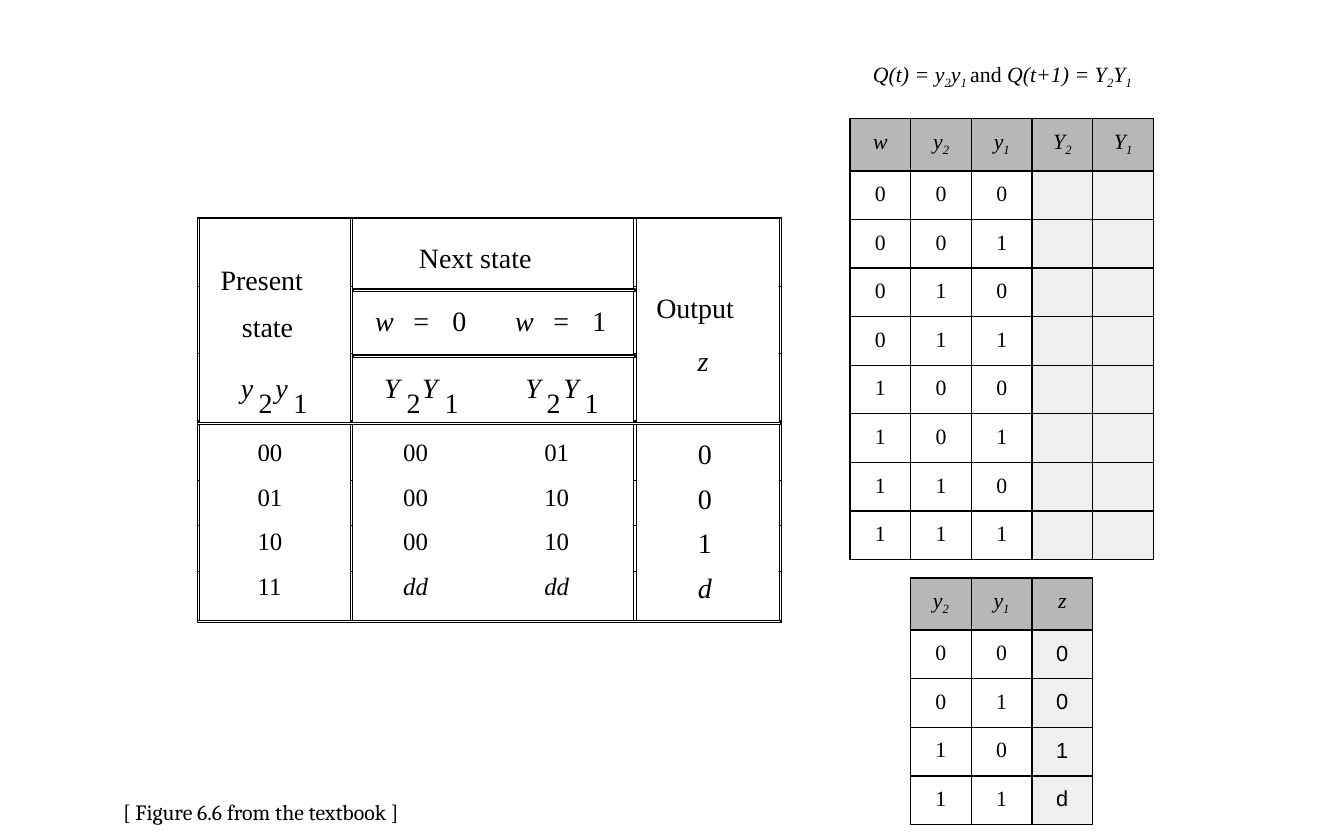
from dataclasses import dataclass
from itertools import pairwise, product

from lxml.etree import SubElement
from pptx import Presentation
from pptx.dml.color import RGBColor
from pptx.enum.shapes import MSO_SHAPE
from pptx.enum.text import MSO_ANCHOR, MSO_AUTO_SIZE, PP_ALIGN
from pptx.oxml.ns import qn
from pptx.util import Inches, Pt

COLUMNS, ROWS = 120, 75
SLIDE_WIDTH, SLIDE_HEIGHT = Inches(12), Inches(7.5)


@dataclass(frozen=True)
class Theme:
    ink: str = "000000"
    paper: str = "FFFFFF"
    header: str = "B7B7B7"
    answer: str = "EFEFEF"
    serif: str = "Times New Roman"
    sans: str = "Arial"
    caption: str = "Cambria"
    large: int = 18
    medium: int = 16
    small: int = 14
    rule: float = 0.75
    border: float = 1


def apply(target, values):
    for name, value in values.items():
        setattr(target, name, value)


def margins(x, y):
    return {"margin_left": x, "margin_right": x, "margin_top": y, "margin_bottom": y}


def symbol(letter, index=""):
    """Runs of an italic variable with an optional subscript."""
    return [(letter, "i")] + ([(index, "is")] if index else [])


class SlideBuilder:
    def __init__(self, slide, theme):
        self.slide, self.theme = slide, theme
        self.shapes = slide.shapes

    def start_group(self):
        self.shapes = self.slide.shapes.add_group_shape().shapes

    def end_group(self):
        self.shapes = self.slide.shapes

    def place(self, column, row, width, height):
        """Turn grid columns and rows into slide lengths."""
        return (int(SLIDE_WIDTH * column / COLUMNS), int(SLIDE_HEIGHT * row / ROWS),
                int(SLIDE_WIDTH * width / COLUMNS), int(SLIDE_HEIGHT * height / ROWS))

    def add_runs(self, frame, runs, size, face, align=PP_ALIGN.LEFT):
        """Add (text, flags) runs; flag i is italic and s is subscript."""
        paragraph = frame.paragraphs[0]
        paragraph.alignment = align
        for text, flags in runs:
            run = paragraph.add_run()
            run.text = text
            apply(run.font, {"size": Pt(size), "name": face, "italic": "i" in flags})
            run.font.color.rgb = RGBColor.from_string(self.theme.ink)
            if "s" in flags:
                run._r.get_or_add_rPr().set("baseline", "-25000")

    def title(self, box, runs):
        title = self.slide.shapes.title
        apply(title, dict(zip(("left", "top", "width", "height"), self.place(*box))))
        apply(title.text_frame, {**margins(Inches(0.1), Inches(0.1)), "word_wrap": True,
                                 "auto_size": MSO_AUTO_SIZE.NONE,
                                 "vertical_anchor": MSO_ANCHOR.TOP})
        self.add_runs(title.text_frame, runs, self.theme.small, self.theme.serif, PP_ALIGN.CENTER)

    def label(self, text, column, row, width, size=None, flags=""):
        frame = self.shapes.add_textbox(*self.place(column, row, width, 3)).text_frame
        apply(frame, {**margins(0, 0), "word_wrap": True})
        self.add_runs(frame, [(text, flags)], size or self.theme.large, self.theme.serif)

    def caption(self, text, box):
        frame = self.shapes.add_textbox(*self.place(*box)).text_frame
        apply(frame, {"word_wrap": False, "auto_size": MSO_AUTO_SIZE.SHAPE_TO_FIT_TEXT})
        self.add_runs(frame, [(text, "")], self.theme.small, self.theme.caption)

    def rule(self, *box):
        """A double rule: a thin outlined bar."""
        bar = self.shapes.add_shape(MSO_SHAPE.RECTANGLE, *self.place(*box))
        bar.shadow.inherit = False
        bar.fill.solid()
        bar.fill.fore_color.rgb = RGBColor.from_string(self.theme.paper)
        bar.line.color.rgb = RGBColor.from_string(self.theme.ink)
        bar.line.width = Pt(self.theme.rule)

    def border(self, cell):
        properties = cell._tc.get_or_add_tcPr()
        for side in ("lnL", "lnR", "lnT", "lnB"):
            line = SubElement(properties, qn(f"a:{side}"), w=str(Pt(self.theme.border)))
            SubElement(SubElement(line, qn("a:solidFill")), qn("a:srgbClr"), val=self.theme.ink)

    def truth_table(self, column, row, headers, lines, inputs):
        """Columns after the first `inputs` hold answers and are shaded."""
        step_x, step_y = 5.42, 4.34
        width, height = len(headers), len(lines) + 1
        box = self.place(column, row, step_x * width, step_y * height)
        table = self.shapes.add_table(height, width, *box).table
        apply(table, {"first_row": False, "horz_banding": False})
        for part in table.columns:
            part.width = box[2] // width
        for part in table.rows:
            part.height = box[3] // height
        cells = [headers] + [[[(value, "")] if value else [] for value in line] for line in lines]
        for y, x in product(range(height), range(width)):
            cell, runs, is_answer = table.cell(y, x), cells[y][x], y > 0 and x >= inputs
            self.border(cell)
            if y == 0 or is_answer:
                cell.fill.solid()
                shade = self.theme.answer if is_answer else self.theme.header
                cell.fill.fore_color.rgb = RGBColor.from_string(shade)
            else:
                cell.fill.background()
            inset = Inches(0.1) if runs else 0
            apply(cell, margins(inset, inset))
            face = self.theme.sans if is_answer else self.theme.serif
            self.add_runs(cell.text_frame, runs, self.theme.small, face, PP_ALIGN.CENTER)


def draw_state_table(builder):
    builder.start_group()
    edges = (17.6, 31.3, 56.6, 69.6)
    levels = (19.4, 25.6, 31.6, 37.6, 42.9, 46.9, 51, 55.6)
    for (top, bottom), edge in product(pairwise(levels), edges):
        builder.rule(edge, top, 0.2, bottom - top)
    for row, thickness in ((19.4, 0.1), (37.7, 0.2), (55.4, 0.2)):
        builder.rule(17.6, row, 52.1, thickness)
    for row in (25.8, 31.7):
        builder.rule(31.6, row, 25.1, 0.2)

    for heading in (("Present", 19.7, 23.4, 8), ("state", 21.6, 27.6, 5.2),
                    ("Next state", 37.4, 21.5, 10.7), ("Output", 58.6, 25.9, 9)):
        builder.label(*heading)
    builder.label("z", 62.3, 30.7, 1.6, flags="i")
    for start, value in ((33.5, "0"), (46, "1")):
        builder.label("w", start, 27.1, 2.3, flags="i")
        builder.label("=", start + 3.4, 27.1, 2)
        builder.label(value, start + 6.9, 27.1, 1.9)
    for letter, start, index_gap, pitch in (("y", 21.5, 1.6, 3.1), ("Y", 34.3, 2, 3.4),
                                            ("Y", 46.9, 1.9, 3.4)):
        for place, index in enumerate("21"):
            builder.label(letter, start + place * pitch, 33.1, 2, flags="i")
            builder.label(index, start + place * pitch + index_gap, 34.4, 1.9)

    states = (("00", "00", "01", "0"), ("01", "00", "10", "0"),
              ("10", "00", "10", "1"), ("11", "dd", "dd", "d"))
    sizes = [builder.theme.medium] * 3 + [builder.theme.large]
    for line, state in enumerate(states):
        for text, column, size in zip(state, (23, 36, 48.6, 62.3), sizes):
            builder.label(text, column, 39 + 3.97 * line, 2.5, size, "i" if "d" in text else "")
    builder.end_group()


def main():
    presentation = Presentation()
    apply(presentation, {"slide_width": SLIDE_WIDTH, "slide_height": SLIDE_HEIGHT})
    title_only = presentation.slide_layouts[5]
    builder = SlideBuilder(presentation.slides.add_slide(title_only), Theme())

    builder.title((73.6, 4.4, 31.8, 4), [
        ("Q(t) = y", "i"), ("2", "is"), ("y", "i"), ("1 ", "is"), ("and", ""),
        (" Q(t+1) = Y", "i"), ("2", "is"), ("Y", "i"), ("1", "is")])
    draw_state_table(builder)

    present = [symbol("y", "2"), symbol("y", "1")]
    following = [symbol("Y", "2"), symbol("Y", "1")]
    transitions = [(*bits, "", "") for bits in product("01", repeat=3)]
    builder.truth_table(75.9, 10.6, [symbol("w")] + present + following, transitions, 3)
    outputs = [(*bits, z) for bits, z in zip(product("01", repeat=2), "001d")]
    builder.truth_table(81.3, 51.6, present + [symbol("z")], outputs, 2)
    builder.caption("[ Figure 6.6 from the textbook ]", (10, 70.8, 26.9, 3.4))
    presentation.save("out.pptx")


if __name__ == "__main__":
    main()
